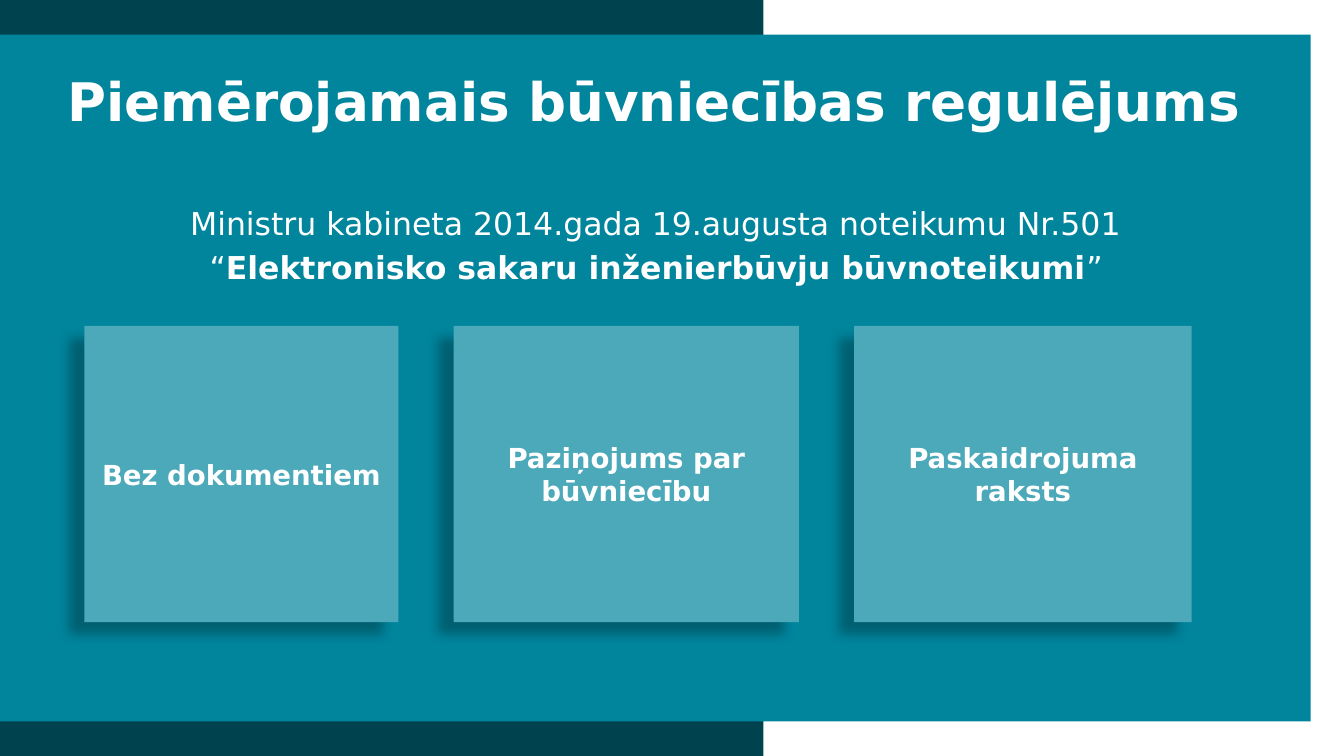
from dataclasses import dataclass

from lxml.etree import SubElement
from pptx import Presentation
from pptx.dml.color import RGBColor
from pptx.enum.shapes import MSO_SHAPE
from pptx.enum.text import MSO_ANCHOR as ANCHOR, MSO_AUTO_SIZE as AUTO_SIZE, PP_ALIGN as ALIGN
from pptx.oxml.ns import qn
from pptx.shapes.autoshape import Shape
from pptx.slide import Slide
from pptx.util import Emu, Pt

PX = 9144
FONT = "DejaVu Sans"
WHITE = RGBColor(0xFF, 0xFF, 0xFF)
DARK_TEAL = RGBColor(0x00, 0x43, 0x4E)
TEAL = RGBColor(0x00, 0x85, 0x9D)
LIGHT_TEAL = RGBColor(0x4C, 0xA9, 0xB9)
CARD_TOP, CARD_HEIGHT = 460, 418


@dataclass(frozen=True)
class Box:
    left: int
    top: int
    width: int
    height: int

    def emu(self) -> tuple[Emu, Emu, Emu, Emu]:
        return (Emu(self.left * PX), Emu(self.top * PX),
                Emu(self.width * PX), Emu(self.height * PX))


@dataclass(frozen=True)
class Panel:
    box: Box
    fill: RGBColor


@dataclass(frozen=True)
class Card:
    text: str
    left: int
    width: int


PANELS = [
    Panel(Box(-4, 0, 1081, 1067), DARK_TEAL),
    Panel(Box(-4, 49, 1853, 969), TEAL),
]
CARDS = [
    Card("Bez dokumentiem", 119, 443),
    Card("Paziņojums par būvniecību", 640, 487),
    Card("Paskaidrojuma raksts", 1205, 476),
]
TITLE = "Piemērojamais būvniecības regulējums"
TITLE_BOX = Box(51, 55, 1744, 185)
REGULATION_BOX = Box(56, 289, 1739, 673)
REGULATION = [
    [("Ministru kabineta 2014.gada 19.augusta noteikumu Nr.501", False)],
    [("“", False), ("Elektronisko sakaru inženierbūvju būvnoteikumi", True), ("”", False)],
]


def format_paragraph(p, size: int, bold: bool | None = None) -> None:
    p.alignment = ALIGN.CENTER
    p.font.name = FONT
    p.font.size = Pt(size)
    p.font.bold = bold
    p.font.color.rgb = WHITE


def space_paragraph(p) -> None:
    p.line_spacing = 0.9
    p.space_before = Pt(10)


def add_rectangle(slide: Slide, box: Box, fill: RGBColor) -> Shape:
    sp = slide.shapes.add_shape(MSO_SHAPE.RECTANGLE, *box.emu())
    sp.shadow.inherit = False
    sp.fill.solid()
    sp.fill.fore_color.rgb = fill
    sp.line.fill.background()
    return sp


def add_shadow(sp: Shape) -> None:
    effects = sp._element.spPr.find(qn("a:effectLst"))
    shadow = SubElement(effects, qn("a:outerShdw"), blurRad=str(Pt(11.8)),
                        dist=str(Pt(19.7)), dir=str(141 * 60000),
                        algn="ctr", rotWithShape="0")
    color = SubElement(shadow, qn("a:srgbClr"), val="000000")
    SubElement(color, qn("a:alpha"), val="28000")


def set_title(slide: Slide) -> None:
    title = slide.shapes.title
    title.left, title.top, title.width, title.height = TITLE_BOX.emu()
    tf = title.text_frame
    tf.text = TITLE
    tf.word_wrap = True
    tf.auto_size = AUTO_SIZE.NONE
    tf.vertical_anchor = ANCHOR.MIDDLE
    p = tf.paragraphs[0]
    format_paragraph(p, 54, True)
    space_paragraph(p)


def add_regulation(slide: Slide) -> None:
    tf = slide.shapes.add_textbox(*REGULATION_BOX.emu()).text_frame
    tf.word_wrap = True
    for i, runs in enumerate(REGULATION):
        p = tf.add_paragraph() if i else tf.paragraphs[0]
        format_paragraph(p, 32)
        space_paragraph(p)
        for text, bold in runs:
            r = p.add_run()
            r.text = text
            r.font.bold = bold


def add_card(slide: Slide, card: Card) -> None:
    box = Box(card.left, CARD_TOP, card.width, CARD_HEIGHT)
    sp = add_rectangle(slide, box, LIGHT_TEAL)
    add_shadow(sp)
    tf = sp.text_frame
    tf.text = card.text
    tf.word_wrap = True
    tf.vertical_anchor = ANCHOR.MIDDLE
    format_paragraph(tf.paragraphs[0], 28, True)


def main() -> None:
    prs = Presentation()
    prs.slide_width, prs.slide_height = Emu(1896 * PX), Emu(1067 * PX)
    slide = prs.slides.add_slide(prs.slide_layouts[5])
    title = slide.shapes.title
    for panel in PANELS:
        sp = add_rectangle(slide, panel.box, panel.fill)
        title._element.addprevious(sp._element)
    set_title(slide)
    add_regulation(slide)
    for card in CARDS:
        add_card(slide, card)
    prs.save("out.pptx")


if __name__ == "__main__":
    main()
